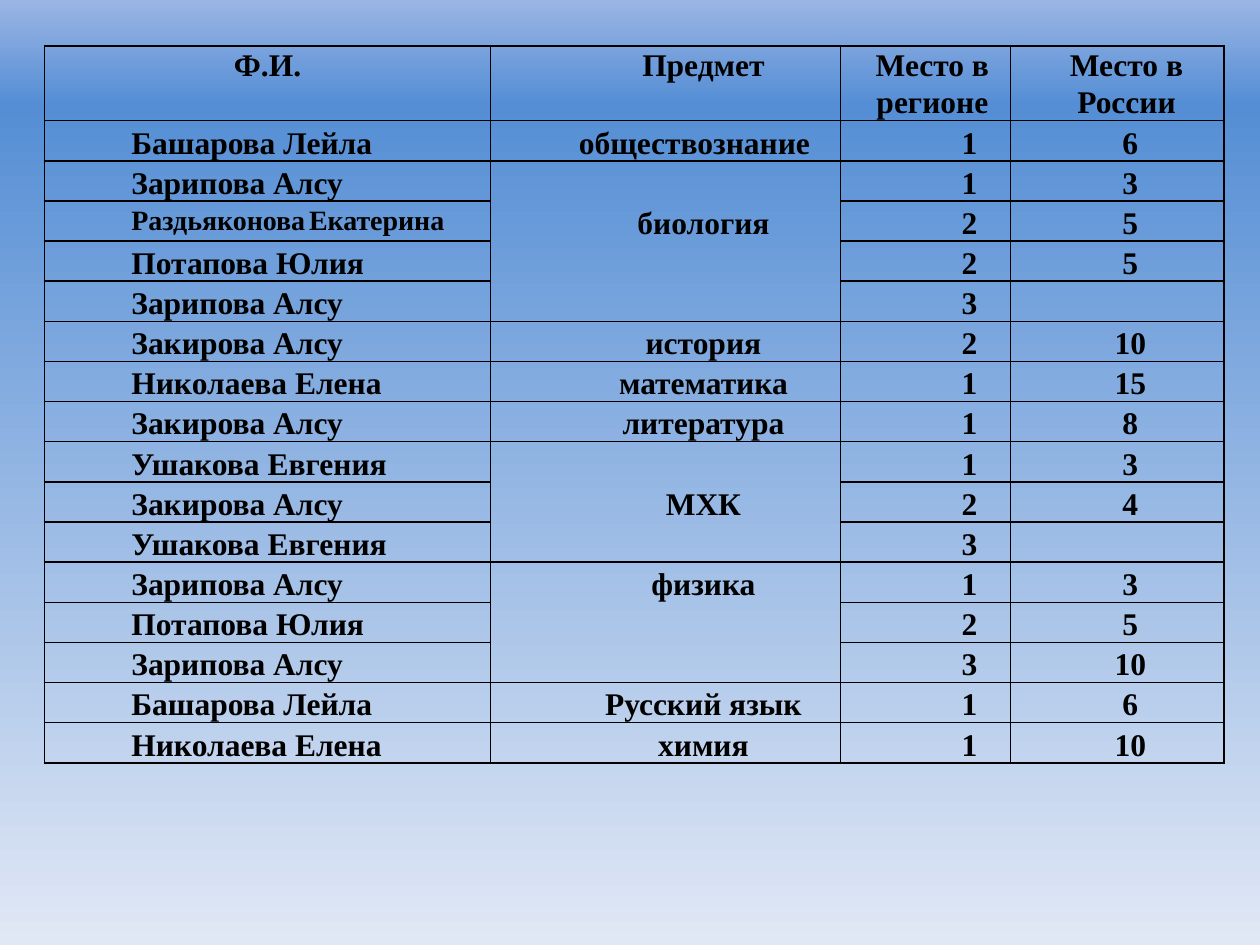
from copy import deepcopy
from dataclasses import dataclass

from lxml.etree import SubElement as Sub
from pptx import Presentation as Deck
from pptx.dml.color import RGBColor as Rgb
from pptx.enum.text import PP_ALIGN as Align
from pptx.oxml import parse_xml
from pptx.oxml.ns import nsdecls, qn
from pptx.util import Pt


@dataclass(frozen=True)
class Theme:
    """Colours, font and type sizes."""
    font: str = "Times New Roman"
    ink: str = "000000"
    body: int = 18
    small: int = 16
    sky: tuple = ((0, "9AB5E4"), (0.11, "558ED5"), (1, "E1E8F5"))


@dataclass(frozen=True)
class Style:
    """Paragraph settings of a cell, lengths in points."""
    align: Align = Align.CENTER
    left: float = 0
    first: float = 0
    space: float = 1.15


THEME = Theme()
LINE = 22.92
WIDTHS = (255, 200, 97, 122)
HEADS = (
    ("Ф.И.", Style(space=1.07)),
    ("Предмет", Style(first=43.2, space=1.07)),
    ("Место в регионе", Style(left=7.92, space=1.07)),
    ("Место в России", Style(left=10.8, space=1.07)),
)
STYLES = (
    Style(Align.LEFT, first=42.5),
    Style(first=43.2),
    Style(first=50.4),
    Style(first=15.1),
)
LONG = "Раздьяконова\tЕкатерина"
GROUPS = (
    ("обществознание", (("Башарова Лейла", "1", "6"),)),
    ("биология", (
        ("Зарипова Алсу", "1", "3"),
        (LONG, "2", "5"),
        ("Потапова Юлия", "2", "5"),
        ("Зарипова Алсу", "3", ""),
    )),
    ("история", (("Закирова Алсу", "2", "10"),)),
    ("математика", (("Николаева Елена", "1", "15"),)),
    ("литература", (("Закирова Алсу", "1", "8"),)),
    ("МХК", (
        ("Ушакова Евгения", "1", "3"),
        ("Закирова Алсу", "2", "4"),
        ("Ушакова Евгения", "3", ""),
    )),
    ("физика", (
        ("Зарипова Алсу", "1", "3"),
        ("Потапова Юлия", "2", "5"),
        ("Зарипова Алсу", "3", "10"),
    )),
    ("Русский язык", (("Башарова Лейла", "1", "6"),)),
    ("химия", (("Николаева Елена", "1", "10"),)),
)
LOWERED = ("биология", "МХК")


def paint_sky(slide):
    """Fill the background with the three-stop gradient."""
    fill = slide.background.fill
    fill.gradient()
    fill.gradient_angle = 270
    stops = next(slide.element.iter(qn("a:gsLst")))
    stops.append(deepcopy(stops[-1]))
    for stop, (place, tint) in zip(fill.gradient_stops, THEME.sky):
        stop.position = place
        stop.color.rgb = Rgb.from_string(tint)


def frame_cell(cell):
    """Clear the fill, set the insets and draw the four borders."""
    cell.fill.background()
    cell.margin_left = cell.margin_right = Pt(7.2)
    cell.margin_top = cell.margin_bottom = 0
    props = cell._tc.get_or_add_tcPr()
    for spot, side in enumerate("LRTB"):
        props.insert(spot, parse_xml(
            f'<a:ln{side} {nsdecls("a")} w="{Pt(1)}"><a:solidFill>'
            f'<a:srgbClr val="{THEME.ink}"/></a:solidFill></a:ln{side}>'))


def write_cell(cell, text, style, size=THEME.body):
    """Set the text of a cell and format it."""
    if not text:
        return
    para = cell.text_frame.paragraphs[0]
    para.text = text
    para.alignment = style.align
    para.line_spacing = style.space
    props = para._p.get_or_add_pPr()
    props.set("marL", str(Pt(style.left)))
    props.set("indent", str(Pt(style.first)))
    for run in para.runs:
        run.font.name = THEME.font
        run.font.size = Pt(size)
        run.font.bold = True
        run.font.color.rgb = Rgb.from_string(THEME.ink)


def add_tab(cell, place):
    """Put a left tab stop in the first paragraph of a cell."""
    props = cell.text_frame.paragraphs[0]._p.get_or_add_pPr()
    tabs = Sub(props, qn("a:tabLst"))
    Sub(tabs, qn("a:tab"), pos=str(Pt(place)), algn="l")


def make_grid(slide, count):
    """Add the empty framed table."""
    high = 42.8
    table = slide.shapes.add_table(
        count + 1, len(WIDTHS), Pt(25.4), Pt(26.2),
        Pt(sum(WIDTHS)), Pt(high + count * LINE)).table
    table.first_row = table.horz_banding = False
    for col, width in zip(table.columns, WIDTHS):
        col.width = Pt(width)
    for spot, row in enumerate(table.rows):
        row.height = Pt(LINE if spot else high)
    for cell in table.iter_cells():
        frame_cell(cell)
    return table


def add_group(table, top, topic, people):
    """Write one subject and the rows of its winners."""
    head = table.cell(top, 1)
    if len(people) > 1:
        head.merge(table.cell(top + len(people) - 1, 1))
    style = Style(Align.LEFT, first=43.2) if top == 1 else STYLES[1]
    write_cell(head, topic, style)
    if topic in LOWERED:
        head.margin_top = Pt(LINE)
    for row, (name, *ranks) in enumerate(people, top):
        cell = table.cell(row, 0)
        size = THEME.small if name == LONG else THEME.body
        write_cell(cell, name, STYLES[0], size)
        if name == LONG:
            add_tab(cell, 153)
        for col, rank in enumerate(ranks, 2):
            write_cell(table.cell(row, col), rank, STYLES[col])


def main():
    """Build the slide and save it."""
    deck = Deck()
    deck.slide_width, deck.slide_height = Pt(720), Pt(540)
    slide = deck.slides.add_slide(deck.slide_layouts[6])
    paint_sky(slide)
    table = make_grid(slide, sum(len(people) for _, people in GROUPS))
    for col, (text, style) in enumerate(HEADS):
        write_cell(table.cell(0, col), text, style)
    top = 1
    for topic, people in GROUPS:
        add_group(table, top, topic, people)
        top += len(people)
    deck.save("out.pptx")


if __name__ == "__main__":
    main()
